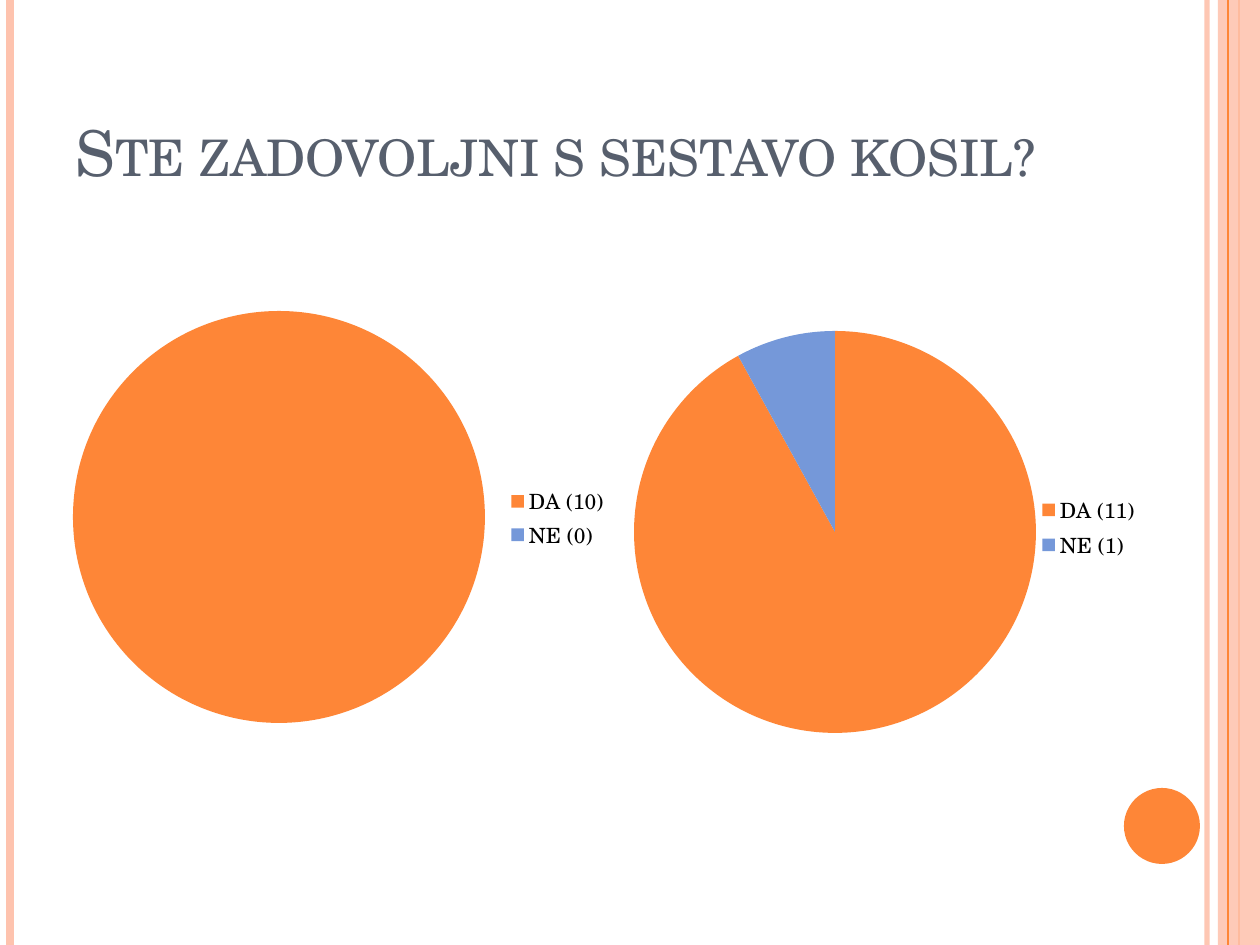
from dataclasses import dataclass

from lxml import etree
from pptx import Presentation
from pptx.chart.data import CategoryChartData
from pptx.dml.color import RGBColor
from pptx.enum import chart as ch, shapes, text
from pptx.oxml.ns import qn
from pptx.util import Emu, Pt

PX = 914400 / 126
FONT = "TeX Gyre Schola"
ORANGE, BLUE, PINK, SLATE = "FE8637", "7598D9", "FEC3AE", "575F6D"


@dataclass
class Box:
    x: int
    y: int
    w: int
    h: int

    def emu(self) -> list[Emu]:
        return [px(v) for v in (self.x, self.y, self.w, self.h)]


@dataclass
class Stripe:
    x: int
    color: str
    width: float
    alpha: int = 100


@dataclass
class Pie:
    frame: Box
    plot: Box
    legend: Box
    slices: dict[str, int]


LEFT_STRIPES = [Stripe(1207, PINK, 3, 93), Stripe(10, PINK, 4.5), Stripe(1239, ORANGE, 1.5)]
EDGE_BAND = Box(1218, 0, 42, 945)
EDGE_STRIPE = Stripe(1228, ORANGE, 0.75)
DOT = Box(1124, 788, 76, 76)
TITLE = Box(63, 38, 1029, 157)
PIES = [
    Pie(Box(54, 294, 566, 446), Box(73, 311, 412, 412), Box(505, 483, 105, 70),
        {"DA (10)": 100, "NE (0)": 0}),
    Pie(Box(591, 314, 605, 436), Box(634, 331, 402, 402), Box(1036, 490, 105, 75),
        {"DA (11)": 92, "NE (1)": 8}),
]


def px(value: int) -> Emu:
    return Emu(round(value * PX))


def paint(fill, color: str, alpha: int = 100) -> None:
    fill.solid()
    fill.fore_color.rgb = RGBColor.from_string(color)
    if alpha < 100:
        node = fill._xPr.find(qn("a:solidFill"))[0]
        etree.SubElement(node, qn("a:alpha")).set("val", str(alpha * 1000))


def add_stripe(s, stripe: Stripe) -> None:
    x = px(stripe.x)
    line = s.shapes.add_connector(shapes.MSO_CONNECTOR.STRAIGHT, x, 0, x, px(945))
    line.line.width = Pt(stripe.width)
    paint(line.line.fill, stripe.color, stripe.alpha)
    etree.SubElement(line._element.spPr, qn("a:effectLst"))


def add_block(s, kind, box: Box, color: str, alpha: int = 100) -> None:
    sp = s.shapes.add_shape(kind, *box.emu())
    sp.shadow.inherit = False
    sp.line.fill.background()
    paint(sp.fill, color, alpha)


def set_layout(parent, index: int, box: Box, frame: Box, inner: bool = False) -> None:
    for old in parent.findall(qn("c:layout")):
        parent.remove(old)
    layout = etree.Element(qn("c:layout"))
    manual = etree.SubElement(layout, qn("c:manualLayout"))
    values = {
        "xMode": "edge",
        "yMode": "edge",
        "x": (box.x - frame.x) / frame.w,
        "y": (box.y - frame.y) / frame.h,
        "w": box.w / frame.w,
        "h": box.h / frame.h,
    }
    if inner:
        values = {"layoutTarget": "inner", **values}
    for name, value in values.items():
        etree.SubElement(manual, qn(f"c:{name}")).set("val", str(value))
    parent.insert(index, layout)


def add_pie(s, pie: Pie) -> None:
    data = CategoryChartData()
    data.categories = list(pie.slices)
    data.add_series("Series 1", list(pie.slices.values()))
    chart = s.shapes.add_chart(ch.XL_CHART_TYPE.PIE, *pie.frame.emu(), data).chart
    chart.has_title = False
    chart.font.name = FONT
    chart.font.size = Pt(10)
    chart.font.color.rgb = RGBColor.from_string("000000")
    chart.has_legend = True
    legend = chart.legend
    legend.position = ch.XL_LEGEND_POSITION.RIGHT
    legend.include_in_layout = False
    legend.font.size = Pt(12)
    legend.font.name = FONT
    for i, color in enumerate((ORANGE, BLUE)):
        point = chart.plots[0].series[0].points[i].format
        paint(point.fill, color)
        point.line.fill.background()
    plot_area = chart._chartSpace.chart.plotArea
    set_layout(plot_area, 0, pie.plot, pie.frame, inner=True)
    set_layout(legend._element, 1, pie.legend, pie.frame)


def set_title(s, words: str) -> None:
    title = s.shapes.title
    title.left, title.top, title.width, title.height = TITLE.emu()
    tf = title.text_frame
    tf.word_wrap = True
    tf.auto_size = text.MSO_AUTO_SIZE.NONE
    tf.vertical_anchor = text.MSO_ANCHOR.BOTTOM
    p = tf.paragraphs[0]
    p.alignment = text.PP_ALIGN.LEFT
    r = p.add_run()
    r.text = words
    r.font.name = FONT
    r.font.size = Pt(36)
    r.font.color.rgb = RGBColor.from_string(SLATE)
    r._r.get_or_add_rPr().set("cap", "small")


def main() -> None:
    prs = Presentation()
    prs.slide_width, prs.slide_height = px(1260), px(945)
    s = prs.slides.add_slide(prs.slide_layouts[5])
    for stripe in LEFT_STRIPES:
        add_stripe(s, stripe)
    add_block(s, shapes.MSO_SHAPE.RECTANGLE, EDGE_BAND, PINK, 87)
    add_stripe(s, EDGE_STRIPE)
    add_block(s, shapes.MSO_SHAPE.OVAL, DOT, ORANGE)
    set_title(s, "Ste zadovoljni s sestavo kosil?")
    for pie in PIES:
        add_pie(s, pie)
    prs.save("out.pptx")


if __name__ == "__main__":
    main()
